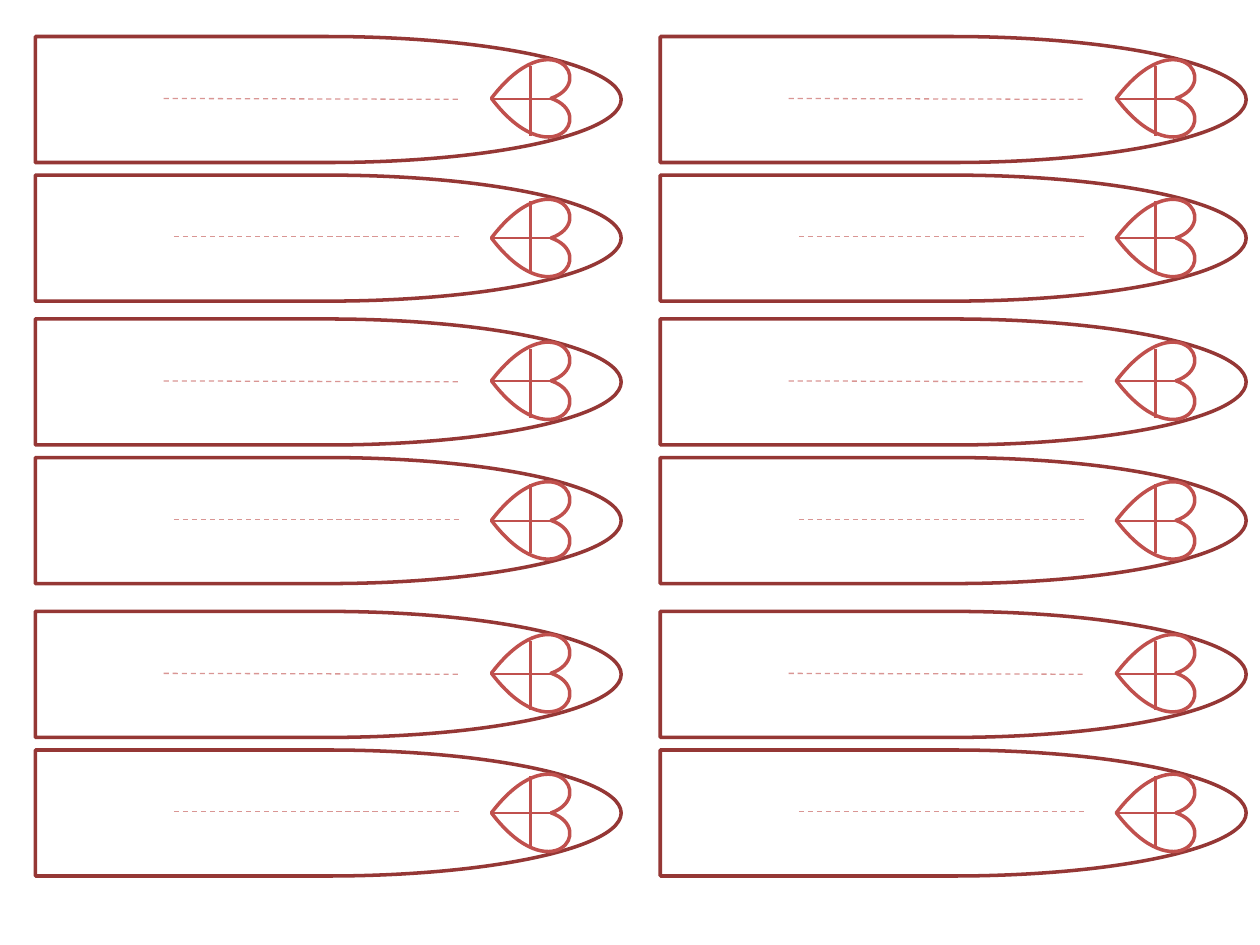
from lxml.etree import SubElement
from pptx import Presentation
from pptx.dml.color import RGBColor
from pptx.enum.dml import MSO_LINE
from pptx.enum.shapes import MSO_CONNECTOR, MSO_SHAPE
from pptx.oxml.ns import qn
from pptx.util import Pt

COLORS = {"border": "953735", "heart": "C0504D", "guide": "D99694"}

# Tag grid, in points
COLUMN_LEFTS = (20.16, 377.28)
PAIR_TOPS = (20.88, 182.3, 349.4)
LOWER_TAG_OFFSET = 79.2

# Positions inside a tag that differ between the two tags of a pair
UPPER = {"guide": (73.4, 35.4, 243.4, 35.9), "heart": 12.6,
         "fold": 35.6, "cut": (16.9, 56.6)}
LOWER = {"guide": (79.2, 35.2, 243.4, 35.2), "heart": 13.2,
         "fold": 36, "cut": (14.8, 54.6)}


class TagSheet:
    """Holds the line style and the current page."""

    def __init__(self, page):
        self.page = page

    def style_line(self, line, color, width):
        line.color.rgb = RGBColor.from_string(COLORS[color])
        line.width = Pt(width)

    def outline(self, kind, left, top, width, height, color, rotation=0):
        shape = self.page.shapes.add_shape(
            kind, Pt(left), Pt(top), Pt(width), Pt(height))
        shape.shadow.inherit = False
        shape.fill.background()
        shape.rotation = rotation
        self.style_line(shape.line, color, 2)

    def line(self, x1, y1, x2, y2, color, width, dashed=False):
        connector = self.page.shapes.add_connector(
            MSO_CONNECTOR.STRAIGHT, Pt(x1), Pt(y1), Pt(x2), Pt(y2))
        self.style_line(connector.line, color, width)
        if dashed:
            connector.line.dash_style = MSO_LINE.DASH
        SubElement(connector._element.spPr, qn("a:effectLst"))

    def tag(self, left, top, layout):
        # Border
        self.outline(MSO_SHAPE.FLOWCHART_DELAY, left, top, 334.8, 72, "border")
        # Dashed writing guide
        x1, y1, x2, y2 = layout["guide"]
        self.line(left + x1, top + y1, left + x2, top + y2,
                  "guide", 0.75, dashed=True)
        # Sideways heart with its cross
        self.outline(MSO_SHAPE.HEART, left + 261.4, top + layout["heart"],
                     43.9, 45.4, "heart", rotation=90)
        fold = top + layout["fold"]
        self.line(left + 294.5, fold, left + 260.6, fold, "heart", 1.25)
        cut_top, cut_bottom = layout["cut"]
        self.line(left + 283, top + cut_top, left + 283, top + cut_bottom,
                  "heart", 1.25)


def main():
    deck = Presentation()
    deck.slide_width, deck.slide_height = Pt(720), Pt(540)
    blank_layout = deck.slide_layouts[6]
    sheet = TagSheet(deck.slides.add_slide(blank_layout))

    # Three pairs of tags in each column
    for top in PAIR_TOPS:
        for left in COLUMN_LEFTS:
            sheet.tag(left, top, UPPER)
            sheet.tag(left, top + LOWER_TAG_OFFSET, LOWER)

    deck.save("out.pptx")


if __name__ == "__main__":
    main()
